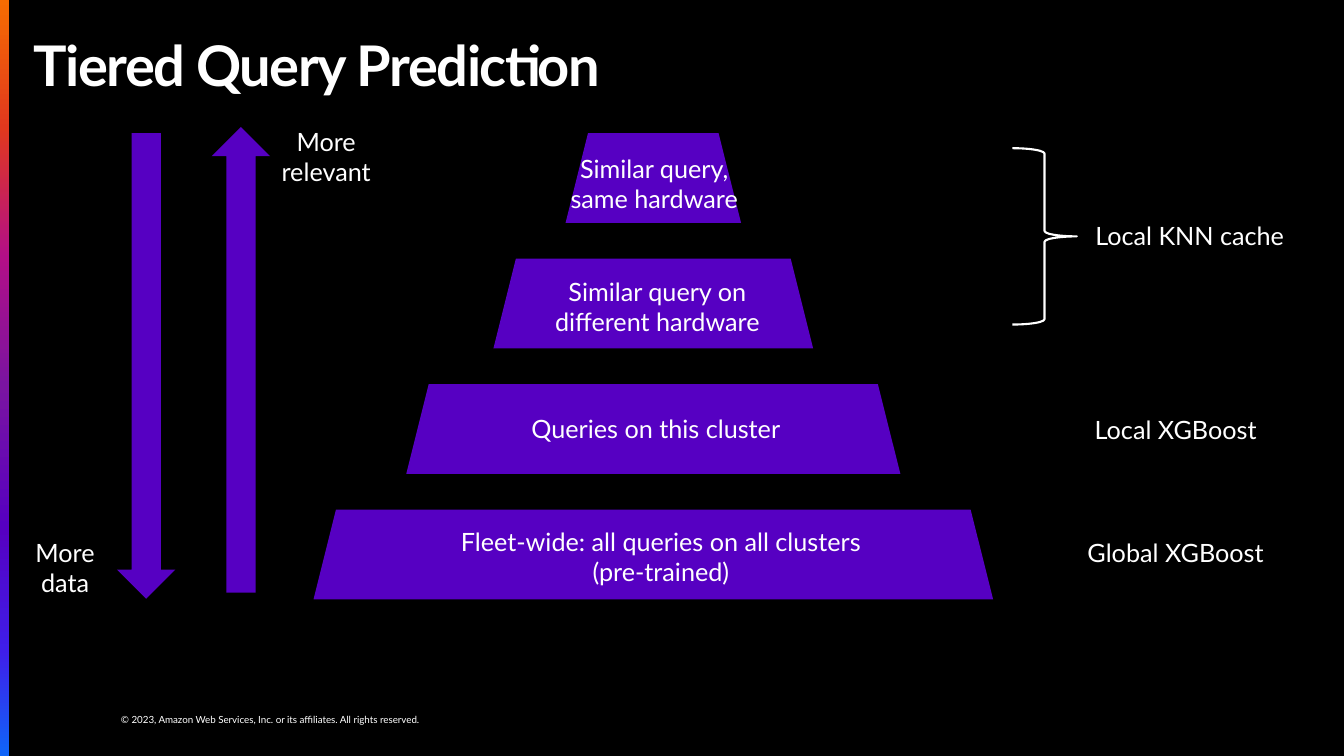
from lxml import etree
from pptx import Presentation
from pptx.dml.color import RGBColor
from pptx.enum import shapes, text
from pptx.oxml import ns
from pptx.util import Inches, Pt

BLACK = RGBColor(0x00, 0x00, 0x00)
WHITE = RGBColor(0xFF, 0xFF, 0xFF)
PURPLE = RGBColor(0x56, 0x00, 0xC2)
FONT = "Lato"

TITLE = "Tiered Query Prediction"
COPYRIGHT = "© 2023, Amazon Web Services, Inc. or its affiliates. All rights reserved."
BAR_STOPS = [(0, "F66C02"), (17, "E1381E"), (34, "B20F87"), (51, "7A14A1"),
             (70, "5600C2"), (86, "3F1EE9"), (100, "0F65F9")]

TIER_WIDTHS = [1.74, 3.17, 4.9, 6.74]
TIER_CENTER, TIER_TOP, TIER_STEP, TIER_HEIGHT = 6.48, 1.32, 1.245, 0.89
ARROWS = [(1.16, 1.32, 0), (2.1, 1.26, 180)]
LABELS = [
    (["Similar query, same hardware"], (5.56, 1.47, 1.86, 0.71)),
    (["Similar query on different hardware"], (5.18, 2.69, 2.68, 0.71)),
    (["Queries on this cluster"], (4.27, 4.05, 4.47, 0.4)),
    (["Fleet-wide: all queries on all clusters", "(pre-trained)"], (4.03, 5.17, 5.05, 0.71)),
    (["More data"], (0.14, 5.28, 1.01, 0.71)),
    (["More relevant"], (2.73, 1.2, 1.01, 0.71)),
    (["Local KNN cache"], (10.46, 2.14, 2.68, 0.4)),
    (["Local XGBoost"], (10.32, 4.06, 2.68, 0.4)),
    (["Global XGBoost"], (10.32, 5.28, 2.68, 0.4)),
]


def add_run(paragraph, words, size, bold=False):
    """Append one white run to a paragraph and return it."""
    run = paragraph.add_run()
    run.text = words
    run.font.name = FONT
    run.font.size = Pt(size)
    run.font.bold = bold
    run.font.color.rgb = WHITE
    return run


def set_margins(frame, vertical):
    """Remove the side margins and set the top and bottom ones."""
    frame.margin_left = frame.margin_right = 0
    frame.margin_top = frame.margin_bottom = Inches(vertical)


def add_label(slide, lines, box, size=18, alignment=text.PP_ALIGN.CENTER, vertical=0.05):
    """Add a wrapping text box with one paragraph per line."""
    frame = slide.shapes.add_textbox(*map(Inches, box)).text_frame
    frame.word_wrap = True
    frame.auto_size = text.MSO_AUTO_SIZE.SHAPE_TO_FIT_TEXT
    set_margins(frame, vertical)
    for index, line in enumerate(lines):
        paragraph = frame.add_paragraph() if index else frame.paragraphs[0]
        paragraph.alignment = alignment
        add_run(paragraph, line, size)


def add_block(slide, kind, box):
    """Add a purple preset shape without outline or shadow."""
    shape = slide.shapes.add_shape(kind, *map(Inches, box))
    shape.shadow.inherit = False
    shape.fill.solid()
    shape.fill.fore_color.rgb = PURPLE
    shape.line.fill.background()
    return shape


def add_bar(slide):
    """Add the vertical rainbow bar on the left edge."""
    bar = add_block(slide, shapes.MSO_SHAPE.RECTANGLE, (0, 0, 0.09, 7.5))
    bar.fill.gradient()
    bar.fill.gradient_angle = 270
    stop_list = bar._element.spPr.find(ns.qn("a:gradFill")).find(ns.qn("a:gsLst"))
    for stop in list(stop_list):
        stop_list.remove(stop)
    for position, color in BAR_STOPS:
        stop = etree.SubElement(stop_list, ns.qn("a:gs"), pos=str(position * 1000))
        etree.SubElement(stop, ns.qn("a:srgbClr"), val=color)


def set_title(slide):
    """Place and format the title placeholder."""
    title = slide.shapes.title
    title.left, title.top, title.width, title.height = map(Inches, (0.33, 0.33, 12.67, 0.7))
    frame = title.text_frame
    frame.auto_size = text.MSO_AUTO_SIZE.NONE
    frame.vertical_anchor = text.MSO_ANCHOR.MIDDLE
    set_margins(frame, 0.05)
    paragraph = frame.paragraphs[0]
    paragraph.alignment = text.PP_ALIGN.LEFT
    paragraph.line_spacing = 0.9
    run = add_run(paragraph, TITLE, 40, bold=True)
    run.font._element.set("spc", "-100")


def main():
    """Build the slide and save it."""
    presentation = Presentation()
    presentation.slide_width, presentation.slide_height = Inches(13.33), Inches(7.5)
    slide = presentation.slides.add_slide(presentation.slide_layouts[5])
    slide.background.fill.solid()
    slide.background.fill.fore_color.rgb = BLACK

    add_label(slide, [COPYRIGHT], (1.2, 7.08, 4.33, 0.12), 7, text.PP_ALIGN.LEFT, 0)
    add_bar(slide)
    set_title(slide)

    for index, width in enumerate(TIER_WIDTHS):
        box = (TIER_CENTER - width / 2, TIER_TOP + index * TIER_STEP, width, TIER_HEIGHT)
        add_block(slide, shapes.MSO_SHAPE.TRAPEZOID, box)
    for left, top, rotation in ARROWS:
        arrow = add_block(slide, shapes.MSO_SHAPE.DOWN_ARROW, (left, top, 0.58, 4.62))
        arrow.rotation = rotation
    for lines, box in LABELS:
        add_label(slide, lines, box)

    brace = add_block(slide, shapes.MSO_SHAPE.RIGHT_BRACE, (10.04, 1.47, 0.64, 1.75))
    brace.fill.background()
    brace.line.color.rgb = WHITE
    brace.line.width = Pt(1.5)

    presentation.save("out.pptx")


if __name__ == "__main__":
    main()
